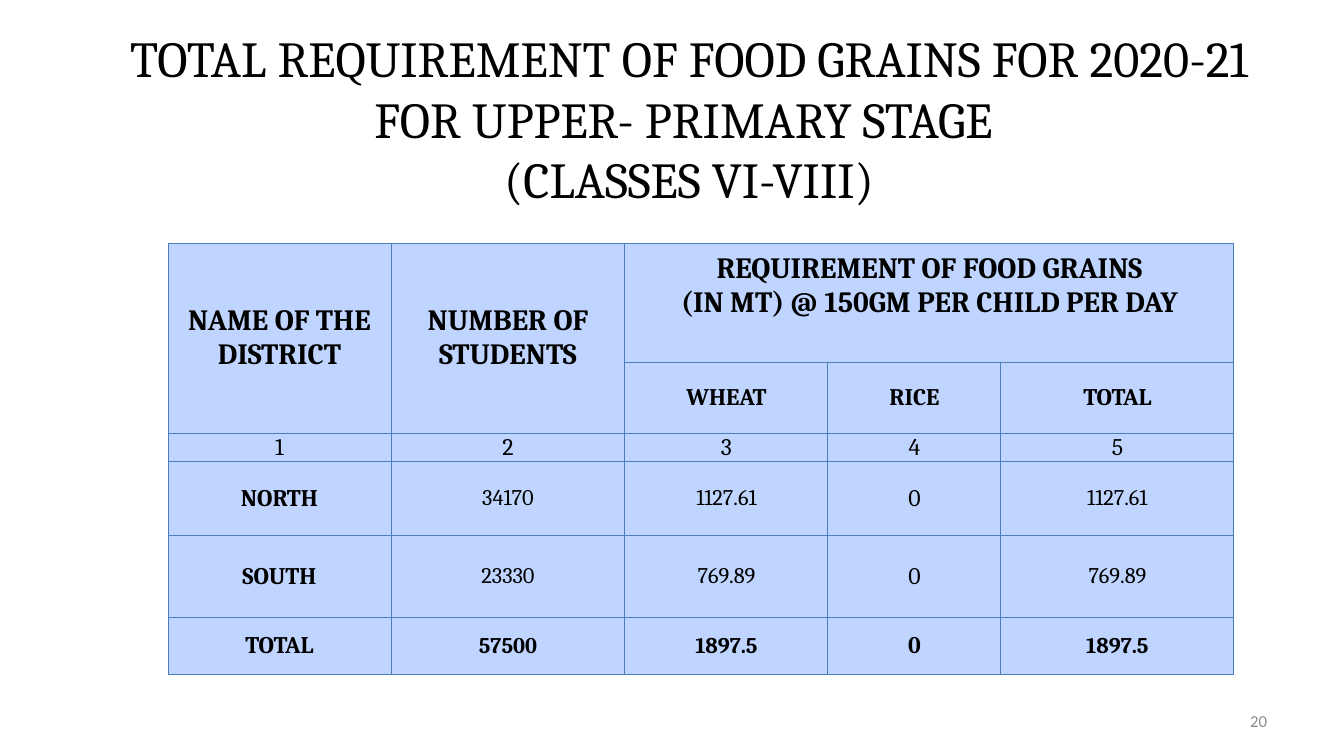
import dataclasses

import pptx
import pptx.dml.color
import pptx.enum.text
import pptx.oxml
import pptx.oxml.ns
import pptx.util

EMU_PER_PX = 12192000 / 1344


def px(length):
    return pptx.util.Emu(round(length * EMU_PER_PX))


@dataclasses.dataclass(frozen=True)
class Theme:
    ink: str = "000000"
    muted: str = "8C8C8C"
    cell_fill: str = "BFD5FF"
    border: str = "4B7EBC"
    heading_font: str = "Cambria"
    number_font: str = "Calibri"
    title_size: int = 36
    header_size: int = 21
    label_size: int = 17
    figure_size: int = 16
    page_size: int = 12
    border_width: float = 0.75


class SlideBuilder:
    def __init__(self, slide, theme):
        self.slide = slide
        self.theme = theme

    def add_lines(self, frame, lines, size, bold=False, font=None, color=None, align="CENTER"):
        frame.word_wrap = True
        for index, line in enumerate(lines):
            paragraph = frame.paragraphs[0] if index == 0 else frame.add_paragraph()
            paragraph.alignment = pptx.enum.text.PP_ALIGN[align]
            for part_index, part in enumerate(line.split("\n")):
                if part_index:
                    paragraph.add_line_break()
                run = paragraph.add_run()
                run.text = part
                run.font.name = font or self.theme.heading_font
                run.font.size = pptx.util.Pt(size)
                run.font.bold = bold
                run.font.color.rgb = pptx.dml.color.RGBColor.from_string(color or self.theme.ink)

    def text(self, box, line, size, **style):
        frame = self.slide.shapes.add_textbox(*map(px, box)).text_frame
        frame.vertical_anchor = pptx.enum.text.MSO_ANCHOR.MIDDLE
        self.add_lines(frame, [line], size, **style)

    def table(self, left, top, columns, rows):
        table = self.slide.shapes.add_table(
            len(rows), len(columns), px(left), px(top), px(sum(columns)), px(sum(rows))
        ).table
        table.first_row = False
        table.horz_banding = False
        for column, width in zip(table.columns, columns):
            column.width = px(width)
        for row, height in zip(table.rows, rows):
            row.height = px(height)
        for cell in table.iter_cells():
            self.paint(cell)
        return table

    def paint(self, cell):
        properties = cell._tc.get_or_add_tcPr()
        for side in ("lnL", "lnR", "lnT", "lnB"):
            properties.append(pptx.oxml.parse_xml(
                f'<a:{side} {pptx.oxml.ns.nsdecls("a")} '
                f'w="{pptx.util.Pt(self.theme.border_width)}"><a:solidFill>'
                f'<a:srgbClr val="{self.theme.border}"/></a:solidFill></a:{side}>'
            ))
        cell.fill.solid()
        cell.fill.fore_color.rgb = pptx.dml.color.RGBColor.from_string(self.theme.cell_fill)

    def cell(self, cell, lines, size, bold=False, side=7, bottom=0):
        cell.vertical_anchor = pptx.enum.text.MSO_ANCHOR.MIDDLE
        cell.margin_left = cell.margin_right = px(side)
        cell.margin_top = px(0)
        cell.margin_bottom = px(bottom)
        self.add_lines(cell.text_frame, lines, size, bold)


def main():
    deck = pptx.Presentation()
    deck.slide_width, deck.slide_height = px(1344), px(756)
    theme = Theme()
    builder = SlideBuilder(deck.slides.add_slide(deck.slide_layouts[6]), theme)

    builder.text(
        (118, 41, 1142, 154),
        "TOTAL REQUIREMENT OF FOOD GRAINS FOR 2020-21 FOR UPPER- PRIMARY STAGE \n(CLASSES VI-VIII)",
        theme.title_size,
    )

    grains = builder.table(168, 243, (223, 234, 203, 173, 233), (119, 71, 27, 74, 82, 57))
    for column, heading in enumerate(("NAME OF THE DISTRICT", "NUMBER OF STUDENTS")):
        grains.cell(0, column).merge(grains.cell(1, column))
        builder.cell(grains.cell(0, column), [heading], theme.header_size, bold=True)
    grains.cell(0, 2).merge(grains.cell(0, 4))
    builder.cell(
        grains.cell(0, 2),
        ["REQUIREMENT OF FOOD GRAINS", "(IN MT) @ 150GM PER CHILD PER DAY"],
        theme.header_size, bold=True, bottom=34,
    )
    for column, grain in enumerate(("WHEAT", "RICE", "TOTAL"), start=2):
        builder.cell(grains.cell(1, column), [grain], theme.label_size, bold=True)
    for column in range(5):
        builder.cell(grains.cell(2, column), [str(column + 1)], theme.label_size)

    districts = (
        ("NORTH", "34170", "1127.61", "0", "1127.61"),
        ("SOUTH", "23330", "769.89", "0", "769.89"),
        ("TOTAL", "57500", "1897.5", "0", "1897.5"),
    )
    for row, (district, *figures) in enumerate(districts, start=3):
        builder.cell(grains.cell(row, 0), [district], theme.label_size, bold=True)
        for column, figure in enumerate(figures, start=1):
            size = theme.label_size if column == 3 else theme.figure_size
            builder.cell(grains.cell(row, column), [figure], size, bold=district == "TOTAL", side=1)

    builder.text(
        (964, 701, 313, 40), "20", theme.page_size,
        font=theme.number_font, color=theme.muted, align="RIGHT",
    )
    deck.save("out.pptx")


if __name__ == "__main__":
    main()
